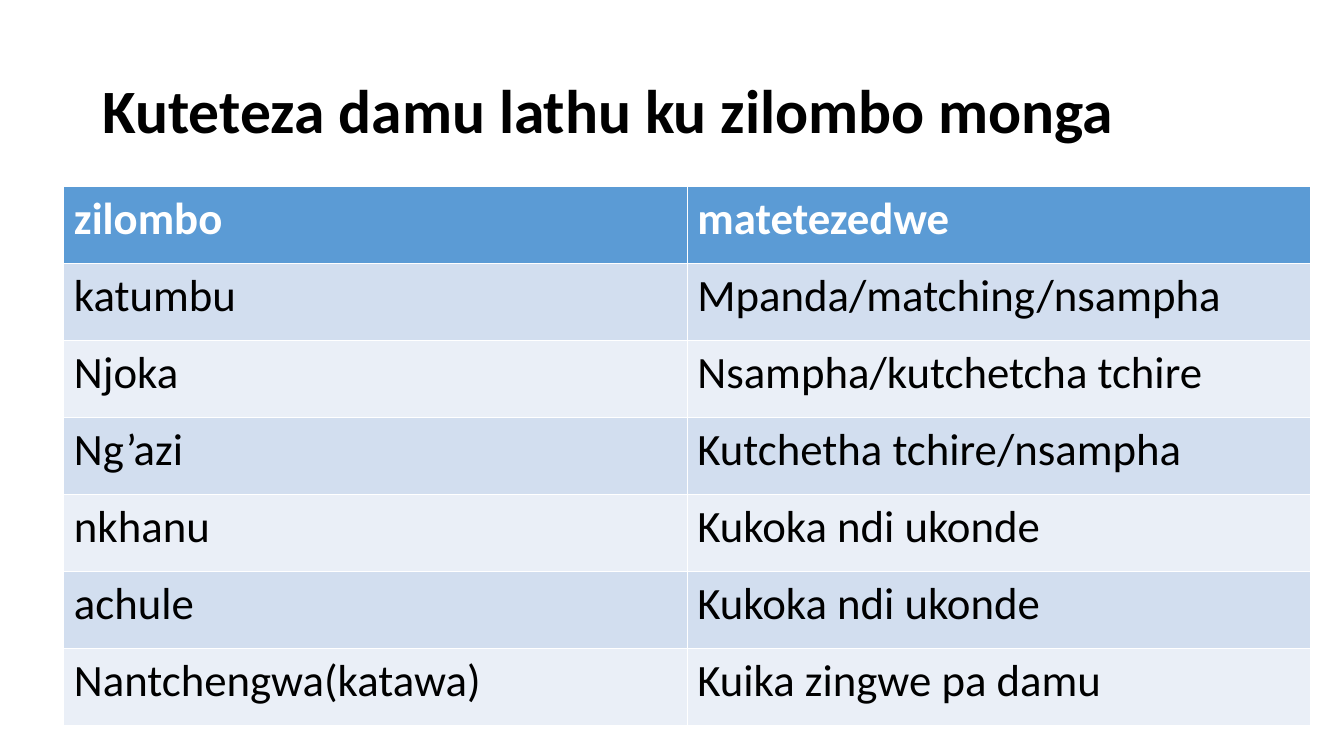
from pptx import Presentation
from pptx.dml.color import RGBColor
from pptx.enum.text import MSO_ANCHOR
from pptx.util import Cm, Pt

BLACK = RGBColor(0x00, 0x00, 0x00)
WHITE = RGBColor(0xFF, 0xFF, 0xFF)
HEADER_BLUE = RGBColor(0x5B, 0x9B, 0xD5)
BAND_DARK = RGBColor(0xD2, 0xDE, 0xEF)
BAND_LIGHT = RGBColor(0xEA, 0xEF, 0xF7)

TITLE = "Kuteteza damu lathu ku zilombo monga"
PESTS = [
    ("zilombo", "matetezedwe"),
    ("katumbu", "Mpanda/matching/nsampha"),
    ("Njoka", "Nsampha/kutchetcha tchire"),
    ("Ng’azi", "Kutchetha tchire/nsampha"),
    ("nkhanu", "Kukoka ndi ukonde"),
    ("achule", "Kukoka ndi ukonde"),
    ("Nantchengwa(katawa)", "Kuika zingwe pa damu"),
]


def write(frame, text, size, color, bold):
    """Set the text of a frame and format it, returning its paragraph."""
    frame.text = text
    para = frame.paragraphs[0]
    font = para.runs[0].font
    font.name, font.size, font.bold = "Calibri", Pt(size), bold
    font.color.rgb = color
    return para


def add_title(page, left, top, width, height):
    """Place the bold heading, centred vertically in its box."""
    frame = page.shapes.add_textbox(left, top, width, height).text_frame
    frame.word_wrap = True
    frame.vertical_anchor = MSO_ANCHOR.MIDDLE
    write(frame, TITLE, 44, BLACK, True).line_spacing = 0.9


def add_pest_table(page, left, top, width, height):
    """Place the banded table of pests and protections."""
    table = page.shapes.add_table(
        len(PESTS), len(PESTS[0]), left, top, width, height
    ).table
    for row, texts in enumerate(PESTS):
        header = row == 0
        band = BAND_DARK if row % 2 else BAND_LIGHT
        for column, text in enumerate(texts):
            cell = table.cell(row, column)
            cell.fill.solid()
            cell.fill.fore_color.rgb = HEADER_BLUE if header else band
            write(cell.text_frame, text, 32, WHITE if header else BLACK, header)


def main():
    """Build and save the deck."""
    deck = Presentation()
    deck.slide_width, deck.slide_height = Cm(33.87), Cm(19.05)
    page = deck.slides.add_slide(deck.slide_layouts[6])
    add_title(page, Cm(2.33), Cm(1.01), Cm(29.21), Cm(3.68))
    add_pest_table(page, Cm(1.61), Cm(4.7), Cm(31.42), Cm(13.58))
    deck.save("out.pptx")


if __name__ == "__main__":
    main()
